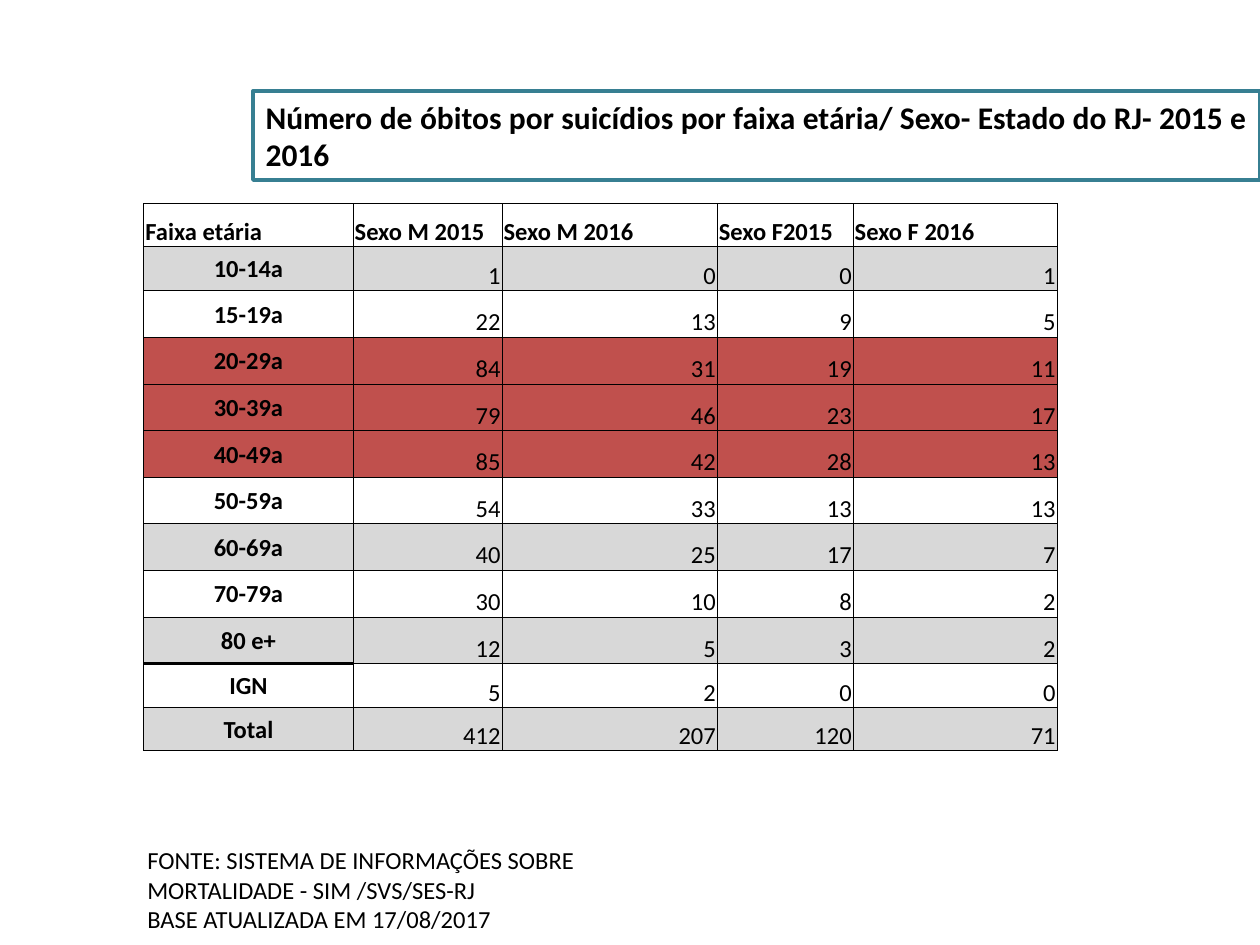
from lxml.etree import SubElement
from pptx import Presentation
from pptx.dml.color import RGBColor
from pptx.enum.text import MSO_ANCHOR, MSO_AUTO_SIZE, PP_ALIGN
from pptx.oxml.ns import qn
from pptx.util import Cm, Pt


def paint(text, size, bold, align):
    for para in text.paragraphs:
        para.alignment = align
        font = para.font
        font.name, font.size, font.bold = "Calibri", Pt(size), bold
        font.color.rgb = RGBColor.from_string("000000")


def edge(cell, side, width):
    line = SubElement(cell._tc.get_or_add_tcPr(), qn("a:ln" + side), w=str(Pt(width)))
    fill = SubElement(line, qn("a:solidFill"))
    SubElement(fill, qn("a:srgbClr"), val="000000")


deck = Presentation()
deck.slide_width, deck.slide_height = Cm(25.4), Cm(19.05)
slide = deck.slides.add_slide(deck.slide_layouts[5])

# Title in a teal frame
title = slide.shapes.title
title.left, title.top, title.width, title.height = Cm(5.1), Cm(1.83), Cm(20.3), Cm(1.8)
title.line.color.rgb = RGBColor.from_string("377F92")
title.line.width = Pt(2)
text = title.text_frame
text.text = "Número de óbitos por suicídios por faixa etária/ Sexo- Estado do RJ- 2015 e 2016"
text.word_wrap = True
text.auto_size = MSO_AUTO_SIZE.NONE
text.vertical_anchor = MSO_ANCHOR.MIDDLE
paint(text, 18, True, PP_ALIGN.JUSTIFY)

# Deaths by age group and sex; the last entry of each row is its fill
gray, red = "D8D8D8", "C0504D"
rows = [
    ("Faixa etária", "Sexo M 2015", "Sexo M 2016", "Sexo F2015", "Sexo F 2016", None),
    ("10-14a", 1, 0, 0, 1, gray),
    ("15-19a", 22, 13, 9, 5, None),
    ("20-29a", 84, 31, 19, 11, red),
    ("30-39a", 79, 46, 23, 17, red),
    ("40-49a", 85, 42, 28, 13, red),
    ("50-59a", 54, 33, 13, 13, None),
    ("60-69a", 40, 25, 17, 7, gray),
    ("70-79a", 30, 10, 8, 2, None),
    ("80 e+", 12, 5, 3, 2, gray),
    ("IGN", 5, 2, 0, 0, None),
    ("Total", 412, 207, 120, 71, gray),
]
widths = [4.22, 3, 4.34, 2.74, 4.11]
heights = [0.86, 0.89] + [0.94] * 8 + [0.89, 0.86]
frame = slide.shapes.add_table(len(rows), len(widths), Cm(2.9), Cm(4.11),
                               Cm(sum(widths)), Cm(sum(heights)))
table = frame.table
table.first_row = table.horz_banding = False
for col, width in zip(table.columns, widths):
    col.width = Cm(width)
for row, height in zip(table.rows, heights):
    row.height = Cm(height)

for r, (*values, tint) in enumerate(rows):
    for c, value in enumerate(values):
        cell = table.cell(r, c)
        cell.text = str(value)
        cell.margin_left = cell.margin_right = cell.margin_top = Cm(0.03)
        cell.margin_bottom = 0
        label = r > 0 and c == 0
        cell.vertical_anchor = MSO_ANCHOR.MIDDLE if label else MSO_ANCHOR.BOTTOM
        align = PP_ALIGN.LEFT if r == 0 else PP_ALIGN.CENTER if label else PP_ALIGN.RIGHT
        paint(cell.text_frame, 14, r == 0 or c == 0, align)
        # Heavier rules under the headings and under the last age group
        heavy = {1: 1} if c else {10: 2}
        for side, width in (("L", 0.5), ("R", 0.5), ("T", heavy.get(r, 0.5)),
                            ("B", heavy.get(r + 1, 0.5))):
            edge(cell, side, width)
        if tint:
            cell.fill.solid()
            cell.fill.fore_color.rgb = RGBColor.from_string(tint)
        else:
            cell.fill.background()

# Source note
note = slide.shapes.add_textbox(Cm(2.72), Cm(16.92), Cm(9.98), Cm(2.13)).text_frame
note.word_wrap = True
note.text = ("FONTE: SISTEMA DE INFORMAÇÕES SOBRE MORTALIDADE - SIM /SVS/SES-RJ\n"
             "BASE ATUALIZADA EM 17/08/2017")
paint(note, 14, False, PP_ALIGN.LEFT)

deck.save("out.pptx")
